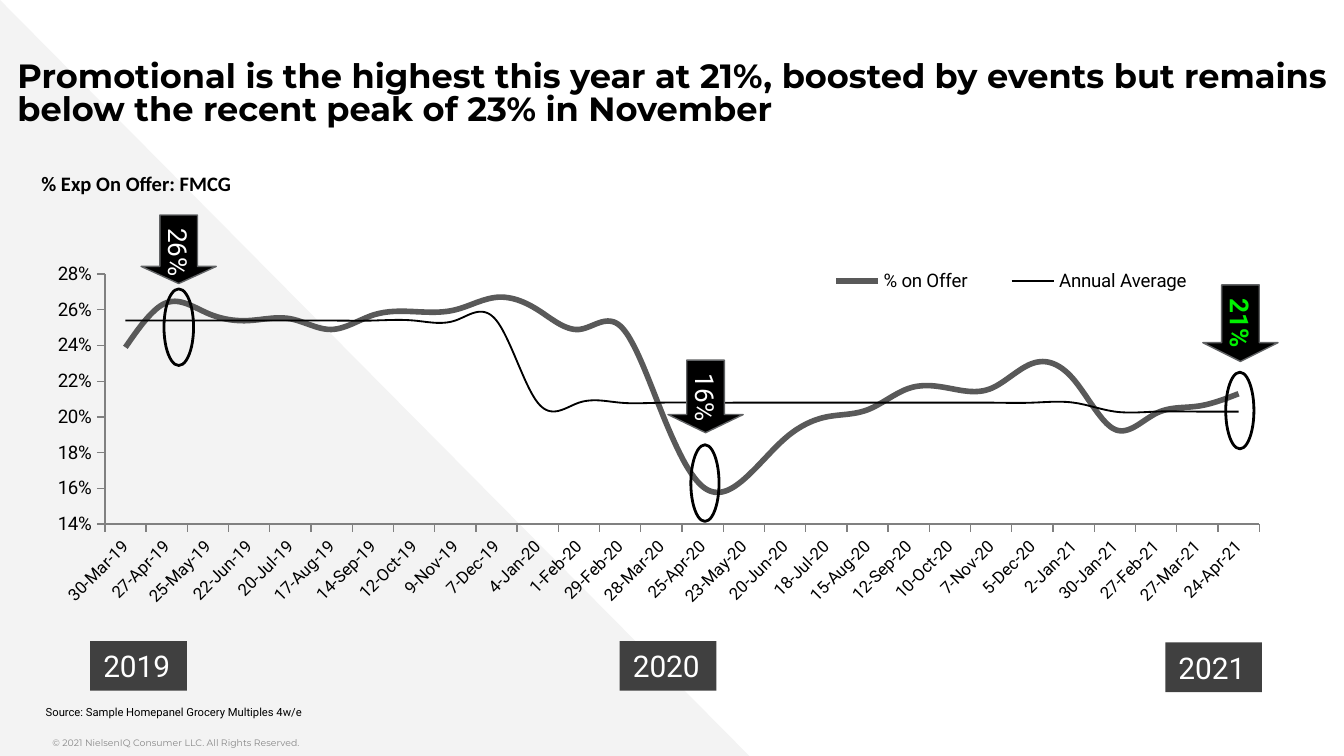
from dataclasses import dataclass

from lxml.etree import SubElement
from pptx import Presentation
from pptx.chart.data import CategoryChartData
from pptx.dml.color import RGBColor
from pptx.enum.chart import XL_CHART_TYPE, XL_LEGEND_POSITION, XL_TICK_LABEL_POSITION, XL_TICK_MARK
from pptx.enum.shapes import MSO_SHAPE
from pptx.enum.text import MSO_ANCHOR, MSO_AUTO_SIZE, PP_ALIGN
from pptx.oxml import parse_xml
from pptx.oxml.ns import nsdecls, qn
from pptx.util import Inches, Pt

COLORS = {
    "black": "000000", "white": "FFFFFF", "pale": "F3F3F3", "note": "888888",
    "edge": "616365", "green": "00F000", "box": "404040", "offer": "595959",
    "axis": "808080",
}


@dataclass
class Box:
    left: float
    top: float
    width: float
    height: float

    def lengths(self) -> list:
        return [Inches(v) for v in (self.left, self.top, self.width, self.height)]

    def share(self, whole: "Box") -> "Box":
        return Box(self.left / whole.width, self.top / whole.height,
                   self.width / whole.width, self.height / whole.height)


@dataclass
class Style:
    size: float
    color: str = "black"
    face: str = "Roboto"
    bold: bool = False


@dataclass
class Peak:
    text: str
    arrow: Box
    ring: Box
    style: Style


@dataclass
class Line:
    name: str
    color: str
    width: float
    values: list


def rgb(name: str) -> RGBColor:
    return RGBColor.from_string(COLORS[name])


def set_font(font, style: Style) -> None:
    font.size, font.name, font.bold = Pt(style.size), style.face, style.bold
    font.color.rgb = rgb(style.color)


def write(shape, text: str, style: Style, align=PP_ALIGN.LEFT):
    frame = shape.text_frame
    frame.text = text
    para = frame.paragraphs[0]
    para.alignment = align
    set_font(para.font, style)
    return frame


def set_flat(shape, box: Box, text: str, style: Style, inset: float, anchor=MSO_ANCHOR.TOP):
    shape.left, shape.top, shape.width, shape.height = box.lengths()
    frame = write(shape, text, style)
    frame.margin_left = frame.margin_right = 0
    frame.margin_top = frame.margin_bottom = Inches(inset)
    frame.word_wrap = True
    frame.auto_size = MSO_AUTO_SIZE.NONE
    frame.vertical_anchor = anchor
    return frame.paragraphs[0]


def add_shape(slide, kind, box: Box, fill: str = "", edge: str = "", width: float = 1):
    shape = slide.shapes.add_shape(kind, *box.lengths())
    shape.shadow.inherit = False
    if fill:
        shape.fill.solid()
        shape.fill.fore_color.rgb = rgb(fill)
    else:
        shape.fill.background()
    if edge:
        shape.line.color.rgb = rgb(edge)
        shape.line.width = Pt(width)
    else:
        shape.line.fill.background()
    return shape


def add_peak(slide, peak: Peak) -> None:
    add_shape(slide, MSO_SHAPE.OVAL, peak.ring, edge="black", width=1.5)
    arrow = add_shape(slide, MSO_SHAPE.DOWN_ARROW, peak.arrow, "black", "edge", 0.75)
    arrow.adjustments[1] = 0.25
    frame = write(arrow, peak.text, peak.style, PP_ALIGN.CENTER)
    frame.word_wrap = False
    frame._txBody.bodyPr.set("vert", "eaVert")


def add_year(slide, text: str, left: float, top: float) -> None:
    shape = add_shape(slide, MSO_SHAPE.RECTANGLE, Box(left, top, 0.72, 0.37), "box")
    write(shape, text, Style(16, "white")).word_wrap = False


def layout(box: Box, inner: bool):
    target = '<c:layoutTarget val="inner"/>' if inner else ""
    return parse_xml(
        f'<c:layout {nsdecls("c")}><c:manualLayout>{target}'
        '<c:xMode val="edge"/><c:yMode val="edge"/>'
        f'<c:x val="{box.left}"/><c:y val="{box.top}"/>'
        f'<c:w val="{box.width}"/><c:h val="{box.height}"/>'
        '</c:manualLayout></c:layout>')


def place(owner, box: Box, spot: int, inner: bool = False) -> None:
    for old in owner.findall(qn("c:layout")):
        owner.remove(old)
    owner.insert(spot, layout(box, inner))


def set_axis(axis, size: float, code: str) -> None:
    axis.has_major_gridlines = False
    axis.major_tick_mark = XL_TICK_MARK.OUTSIDE
    axis.minor_tick_mark = XL_TICK_MARK.NONE
    axis.format.line.color.rgb = rgb("axis")
    axis.format.line.width = Pt(0.75)
    set_font(axis.tick_labels.font, Style(size))
    axis.tick_labels.number_format = code
    axis.tick_labels.number_format_is_linked = False


def add_trend(slide, box: Box, lines: list) -> None:
    data = CategoryChartData(number_format="0%")
    data.categories = range(43554, 44311, 28)
    data.categories.number_format = "d-mmm-yy"
    for line in lines:
        data.add_series(line.name, line.values)
    chart = slide.shapes.add_chart(XL_CHART_TYPE.LINE, *box.lengths(), data).chart
    chart.has_title = False
    set_font(chart.font, Style(18, face="Arial"))

    dates, rate = chart.category_axis, chart.value_axis
    set_axis(dates, 9, "d-mmm-yy")
    set_axis(rate, 10, "0%")
    dates.tick_label_position = XL_TICK_LABEL_POSITION.LOW
    dates._element.find(qn("c:auto")).set("val", "0")
    dates._element.find(qn("c:txPr")).find(qn("a:bodyPr")).set("rot", "-2700000")
    rate.minimum_scale, rate.maximum_scale, rate.major_unit = 0.14, 0.28, 0.02

    for series, line in zip(chart.plots[0].series, lines):
        series.smooth = True
        series.format.line.color.rgb = rgb(line.color)
        series.format.line.width = Pt(line.width)
    chart.plots[0].vary_by_categories = False

    chart.has_legend = True
    chart.legend.position = XL_LEGEND_POSITION.RIGHT
    chart.legend.include_in_layout = False
    set_font(chart.legend.font, Style(10))
    place(chart.legend._element, Box(5.62, 0.09, 3.17, 0.26).share(box), 1)
    place(chart._chartSpace.chart.plotArea, Box(0.46, 0.17, 8.59, 1.86).share(box), 0, True)


LINES = [
    Line("% on Offer", "offer", 3, [
        0.239, 0.264, 0.258, 0.254, 0.255, 0.249, 0.257, 0.259, 0.26, 0.267,
        0.26, 0.249, 0.251, 0.203, 0.161, 0.165, 0.188, 0.2, 0.204, 0.216,
        0.216, 0.216, 0.23, 0.221, 0.193, 0.202, 0.206, 0.213]),
    Line("Annual Average", "black", 1, [0.254] * 10 + [0.208] * 14 + [0.203] * 4),
]
PEAKS = [
    Peak("26%", Box(1.05, 1.6, 0.56, 0.51), Box(1.22, 2.15, 0.22, 0.57), Style(14, "white")),
    Peak("16%", Box(4.97, 2.68, 0.56, 0.54), Box(5.14, 3.31, 0.21, 0.57), Style(14, "white")),
    Peak("21%", Box(8.95, 2.12, 0.56, 0.57), Box(9.12, 2.77, 0.21, 0.57),
         Style(14, "green", bold=True)),
]
YEARS = [("2019", 0.67, 4.77), ("2020", 4.61, 4.77), ("2021", 8.67, 4.78)]


def main() -> None:
    deck = Presentation()
    deck.slide_width, deck.slide_height = Inches(10), Inches(10) * 9 // 16
    slide = deck.slides.add_slide(deck.slide_layouts[1])
    title, body = slide.placeholders

    wedge = add_shape(slide, MSO_SHAPE.RIGHT_TRIANGLE, Box(0, 0, 5.59, 5.64), "pale")
    slide.shapes._spTree.insert(2, wedge._element)
    head = set_flat(
        title, Box(0.13, 0.37, 9.91, 0.69),
        "Promotional is the highest this year at 21%, boosted by events "
        "but remains below the recent peak of 23% in November",
        Style(18, face="Montserrat", bold=True), 0.1)
    head.line_spacing = 0.8

    source = set_flat(body, Box(0.22, 5.15, 5, 0.57),
                      "Source: Sample Homepanel Grocery Multiples 4w/e", Style(6), 0.1)
    props = source._p.get_or_add_pPr()
    props.set("marL", str(Inches(0.12)))
    props.set("indent", "0")
    source.space_before = Pt(0)
    props.insert(1, SubElement(props, qn("a:buNone")))

    area = Box(0.39, 5.43, 5.54, 0.2)
    note = slide.shapes.add_textbox(*area.lengths())
    set_flat(note, area, "© 2021 NielsenIQ Consumer LLC. All Rights Reserved.",
             Style(5, "note", "Montserrat"), 0.05, MSO_ANCHOR.MIDDLE)

    add_trend(slide, Box(0.32, 1.87, 9.45, 3.25), LINES)
    label = slide.shapes.add_textbox(*Box(0.21, 1.22, 1.67, 0.29).lengths())
    write(label, "% Exp On Offer: FMCG", Style(11, face="Calibri", bold=True)).word_wrap = False
    for peak in PEAKS:
        add_peak(slide, peak)
    for year in YEARS:
        add_year(slide, *year)
    deck.save("out.pptx")


if __name__ == "__main__":
    main()
